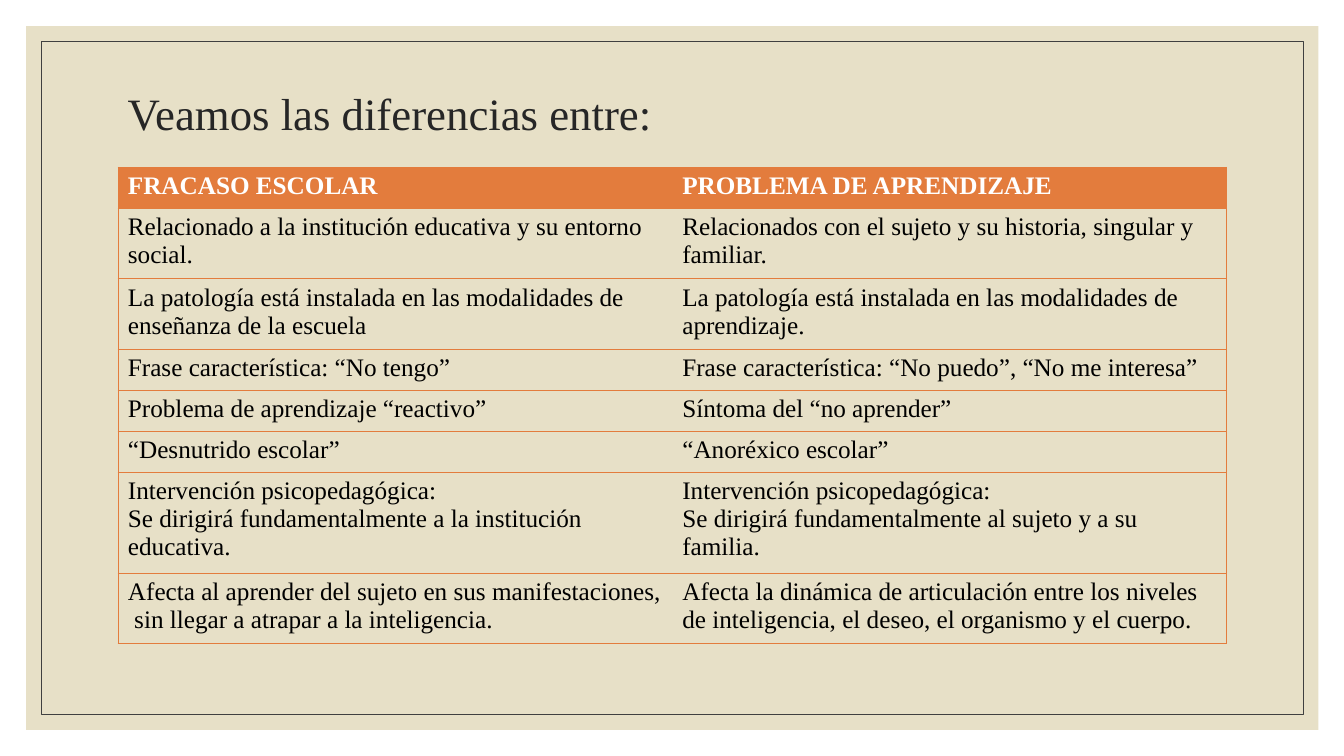
from lxml.etree import SubElement as Sub
from pptx import Presentation
from pptx.dml.color import RGBColor
from pptx.enum.shapes import MSO_SHAPE as Shape
from pptx.enum.text import MSO_ANCHOR as Anchor
from pptx.oxml.ns import qn
from pptx.util import Pt

ORANGE = "E37C3D"


def paint(fill, color):
    """Give a fill, line fill or font fill a solid colour."""
    fill.solid()
    fill.fore_color.rgb = RGBColor.from_string(color)


def write(para, text, size, color, bold=False):
    run = para.add_run()
    run.text = text
    run.font.name = "Times New Roman"
    run.font.size = Pt(size)
    run.font.bold = bold
    paint(run.font.fill, color)


prs = Presentation()
prs.slide_width, prs.slide_height = Pt(960), Pt(540)
slide = prs.slides.add_slide(prs.slide_layouts[6])
shapes = slide.shapes

# Beige panel and thin inner frame
panel = shapes.add_shape(Shape.RECTANGLE, Pt(18.7), Pt(18.7), Pt(923), Pt(502.6))
panel.shadow.inherit = False
paint(panel.fill, "E7E0C7")
panel.line.fill.background()

frame = shapes.add_shape(Shape.RECTANGLE, Pt(29.5), Pt(29.5), Pt(901.4), Pt(481))
frame.shadow.inherit = False
frame.fill.background()
paint(frame.line.fill, "404040")
frame.line.width = Pt(0.5)

# Title
title = shapes.add_textbox(Pt(84.2), Pt(58), Pt(792), Pt(50)).text_frame
title.word_wrap = True
title.vertical_anchor = Anchor.MIDDLE
title.paragraphs[0].line_spacing = 0.9
write(title.paragraphs[0], "Veamos las diferencias entre:", 32, "262626")

# Comparison table: row height, left text, right text
rows = [
    (29.2, "FRACASO ESCOLAR", "PROBLEMA DE APRENDIZAJE"),
    (47, "Relacionado a la institución educativa y su entorno social.",
     "Relacionados con el sujeto y su historia, singular y familiar."),
    (47, "La patología está instalada en las modalidades de enseñanza de la escuela",
     "La patología está instalada en las modalidades de aprendizaje."),
    (29.2, "Frase característica: “No tengo”",
     "Frase característica: “No puedo”, “No me interesa”"),
    (29.2, "Problema de aprendizaje “reactivo”", "Síntoma del “no aprender”"),
    (29.2, "“Desnutrido escolar”", "“Anoréxico escolar”"),
    (67, "Intervención psicopedagógica:\n"
     "Se dirigirá fundamentalmente a la institución educativa.",
     "Intervención psicopedagógica:\n"
     "Se dirigirá fundamentalmente al sujeto y a su familia."),
    (47, "Afecta al aprender del sujeto en sus manifestaciones,  sin llegar a "
     "atrapar a la inteligencia.",
     "Afecta la dinámica de articulación entre los niveles de inteligencia, "
     "el deseo, el organismo y el cuerpo."),
]
total = sum(row[0] for row in rows)
table = shapes.add_table(len(rows), 2, Pt(84.2), Pt(119.5), Pt(792), Pt(total)).table
table.horz_banding = False

for r, (height, *texts) in enumerate(rows):
    table.rows[r].height = Pt(height)
    for c, text in enumerate(texts):
        cell = table.cell(r, c)
        props = cell._tc.get_or_add_tcPr()
        # Every edge is ruled except the one between the two columns
        inner = "R" if c == 0 else "L"
        for side in "LRTB":
            edge = Sub(props, qn("a:ln" + side), w=str(Pt(0.5)))
            if side == inner:
                Sub(edge, qn("a:noFill"))
            else:
                Sub(Sub(edge, qn("a:solidFill")), qn("a:srgbClr"), val=ORANGE)
        head = r == 0
        if head:
            paint(cell.fill, ORANGE)
        else:
            cell.fill.background()
        body = cell.text_frame
        for i, line in enumerate(text.split("\n")):
            para = body.add_paragraph() if i else body.paragraphs[0]
            write(para, line, 18, "FFFFFF" if head else "000000", head)

prs.save("out.pptx")
